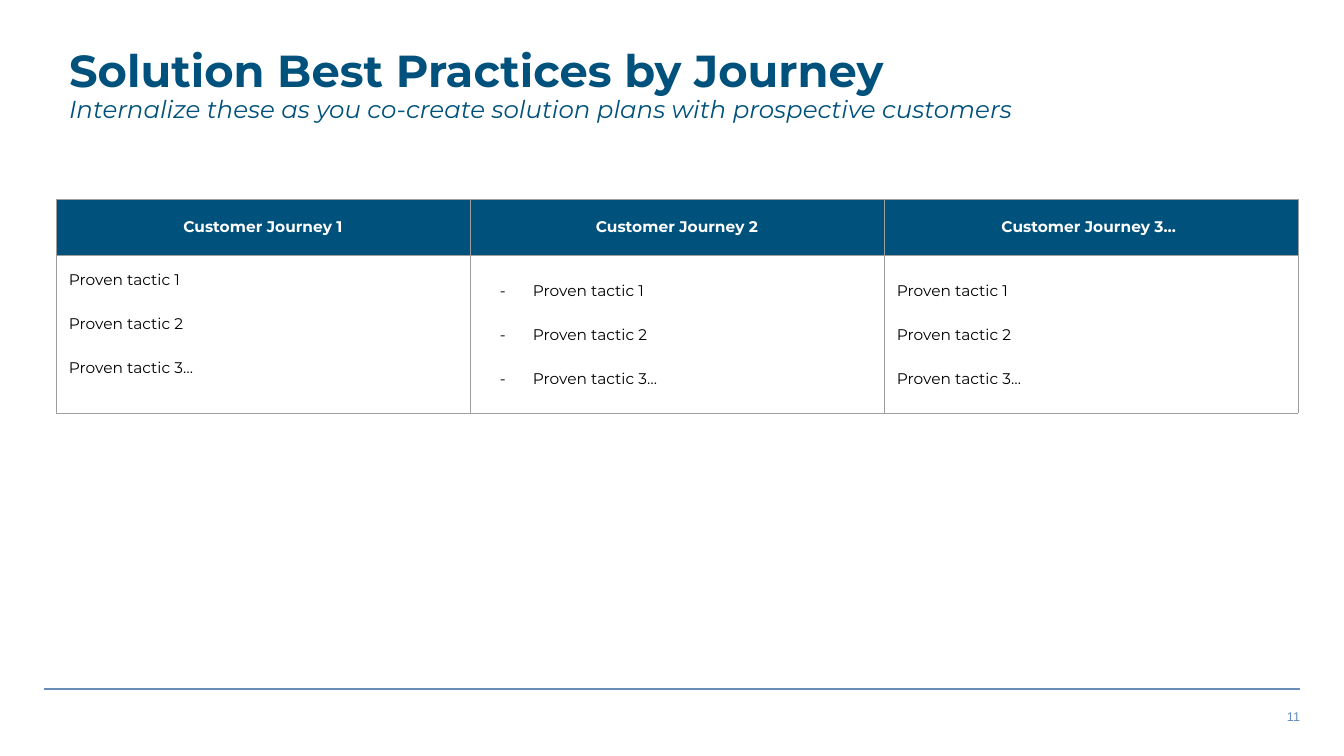
"""Build the slide of solution best practices by customer journey."""
from lxml import etree
from pptx import Presentation
from pptx.dml.color import RGBColor
from pptx.enum.shapes import MSO_CONNECTOR
from pptx.enum.text import MSO_ANCHOR, MSO_AUTO_SIZE, PP_ALIGN
from pptx.oxml.ns import qn
from pptx.util import Emu, Pt

LEFT, CENTER, RIGHT = PP_ALIGN.LEFT, PP_ALIGN.CENTER, PP_ALIGN.RIGHT
TOP, MIDDLE = MSO_ANCHOR.TOP, MSO_ANCHOR.MIDDLE
NO_AUTO_SIZE = MSO_AUTO_SIZE.NONE
STRAIGHT = MSO_CONNECTOR.STRAIGHT

TITLE = "Solution Best Practices by Journey"
SUBTITLE = "Internalize these as you co-create solution plans with prospective customers"
TACTICS = ["Proven tactic 1", "Proven tactic 2", "Proven tactic 3…"]
JOURNEYS = [
    {"name": "Customer Journey 1", "anchor": TOP, "bulleted": False},
    {"name": "Customer Journey 2", "anchor": MIDDLE, "bulleted": True},
    {"name": "Customer Journey 3… ", "anchor": MIDDLE, "bulleted": False},
]
PAGE_NUMBER = "11"

NAVY, BLUE, GREY, BLACK, WHITE = "00517C", "668EB9", "9E9E9E", "000000", "FFFFFF"
HEADING_FONT, NUMBER_FONT = "Montserrat", "Arial"

EMU_PER_PX = 914400 / 100.8
SLIDE_SIZE = (1344, 756)
TITLE_BOX = (59, 44, 1146, 103)
NUMBER_BOX = (773, 704, 537, 25)
RULE = (44, 689, 1300, 689)
TABLE_LEFT, TABLE_TOP, COLUMN_WIDTH = 56, 199, 414
ROW_HEIGHTS = (56, 158)
CELL_MARGIN, BULLET_INDENT, BULLET_HANG = 13, 50, 33


def px(length):
    return Emu(round(length * EMU_PER_PX))


def color(hex_value):
    return RGBColor.from_string(hex_value)


def add_run(paragraph, text, size, hex_value, bold=False, italic=False, font=HEADING_FONT):
    run = paragraph.add_run()
    run.text = text
    run.font.name = font
    run.font.size = Pt(size)
    run.font.bold = bold
    run.font.italic = italic
    run.font.color.rgb = color(hex_value)


def next_paragraph(text_frame, index):
    return text_frame.paragraphs[0] if index == 0 else text_frame.add_paragraph()


def set_bullet(paragraph):
    properties = paragraph._p.get_or_add_pPr()
    properties.set("marL", str(px(BULLET_INDENT)))
    properties.set("indent", str(-px(BULLET_HANG)))
    bullet_color = etree.SubElement(properties, qn("a:buClr"))
    etree.SubElement(bullet_color, qn("a:srgbClr"), val=BLACK)
    etree.SubElement(properties, qn("a:buFont"), typeface=HEADING_FONT)
    etree.SubElement(properties, qn("a:buChar"), char="-")


def format_cell(cell, anchor):
    cell.vertical_anchor = anchor
    cell.margin_left = cell.margin_right = px(CELL_MARGIN)
    cell.margin_top = cell.margin_bottom = px(CELL_MARGIN)
    properties = cell._tc.get_or_add_tcPr()
    for side in ("lnL", "lnR", "lnT", "lnB"):
        line = etree.SubElement(properties, qn(f"a:{side}"), w=str(Pt(0.75)))
        fill = etree.SubElement(line, qn("a:solidFill"))
        etree.SubElement(fill, qn("a:srgbClr"), val=GREY)


def add_title(slide):
    title = slide.shapes.title
    title.left, title.top, title.width, title.height = map(px, TITLE_BOX)
    text_frame = title.text_frame
    text_frame.word_wrap = True
    text_frame.auto_size = NO_AUTO_SIZE
    text_frame.vertical_anchor = TOP
    for index in range(2):
        paragraph = next_paragraph(text_frame, index)
        paragraph.alignment = LEFT
        paragraph.line_spacing = 0.9
        paragraph.space_before = Pt(0)
        if index == 0:
            add_run(paragraph, TITLE, 32, NAVY, bold=True)
        else:
            add_run(paragraph, SUBTITLE, 17.5, NAVY, italic=True)


def add_journey_table(slide):
    frame = slide.shapes.add_table(
        len(ROW_HEIGHTS), len(JOURNEYS), px(TABLE_LEFT), px(TABLE_TOP),
        px(COLUMN_WIDTH * len(JOURNEYS)), px(sum(ROW_HEIGHTS)))
    table = frame.table
    table.horz_banding = False
    for row, height in zip(table.rows, ROW_HEIGHTS):
        row.height = px(height)
    for column, journey in enumerate(JOURNEYS):
        table.columns[column].width = px(COLUMN_WIDTH)
        header, body = table.cell(0, column), table.cell(1, column)
        format_cell(header, MIDDLE)
        header.fill.solid()
        header.fill.fore_color.rgb = color(NAVY)
        heading = header.text_frame.paragraphs[0]
        heading.alignment = CENTER
        add_run(heading, journey["name"], 11, WHITE, bold=True)
        format_cell(body, journey["anchor"])
        body.fill.background()
        for index, tactic in enumerate(TACTICS):
            paragraph = next_paragraph(body.text_frame, index)
            paragraph.alignment = LEFT
            paragraph.line_spacing = 1.15
            paragraph.space_before = Pt(16)
            if journey["bulleted"]:
                set_bullet(paragraph)
            add_run(paragraph, tactic, 11, BLACK)


def add_footer(slide):
    rule = slide.shapes.add_connector(STRAIGHT, *map(px, RULE))
    rule.line.color.rgb = color(BLUE)
    rule.line.width = Pt(1)
    etree.SubElement(rule._element.spPr, qn("a:effectLst"))
    number = slide.shapes.add_textbox(*map(px, NUMBER_BOX))
    number.text_frame.word_wrap = True
    paragraph = number.text_frame.paragraphs[0]
    paragraph.alignment = RIGHT
    add_run(paragraph, PAGE_NUMBER, 9, BLUE, font=NUMBER_FONT)


def main():
    presentation = Presentation()
    presentation.slide_width, presentation.slide_height = map(px, SLIDE_SIZE)
    slide = presentation.slides.add_slide(presentation.slide_layouts.get_by_name("Title Only"))
    add_footer(slide)
    add_title(slide)
    add_journey_table(slide)
    presentation.save("out.pptx")


if __name__ == "__main__":
    main()
